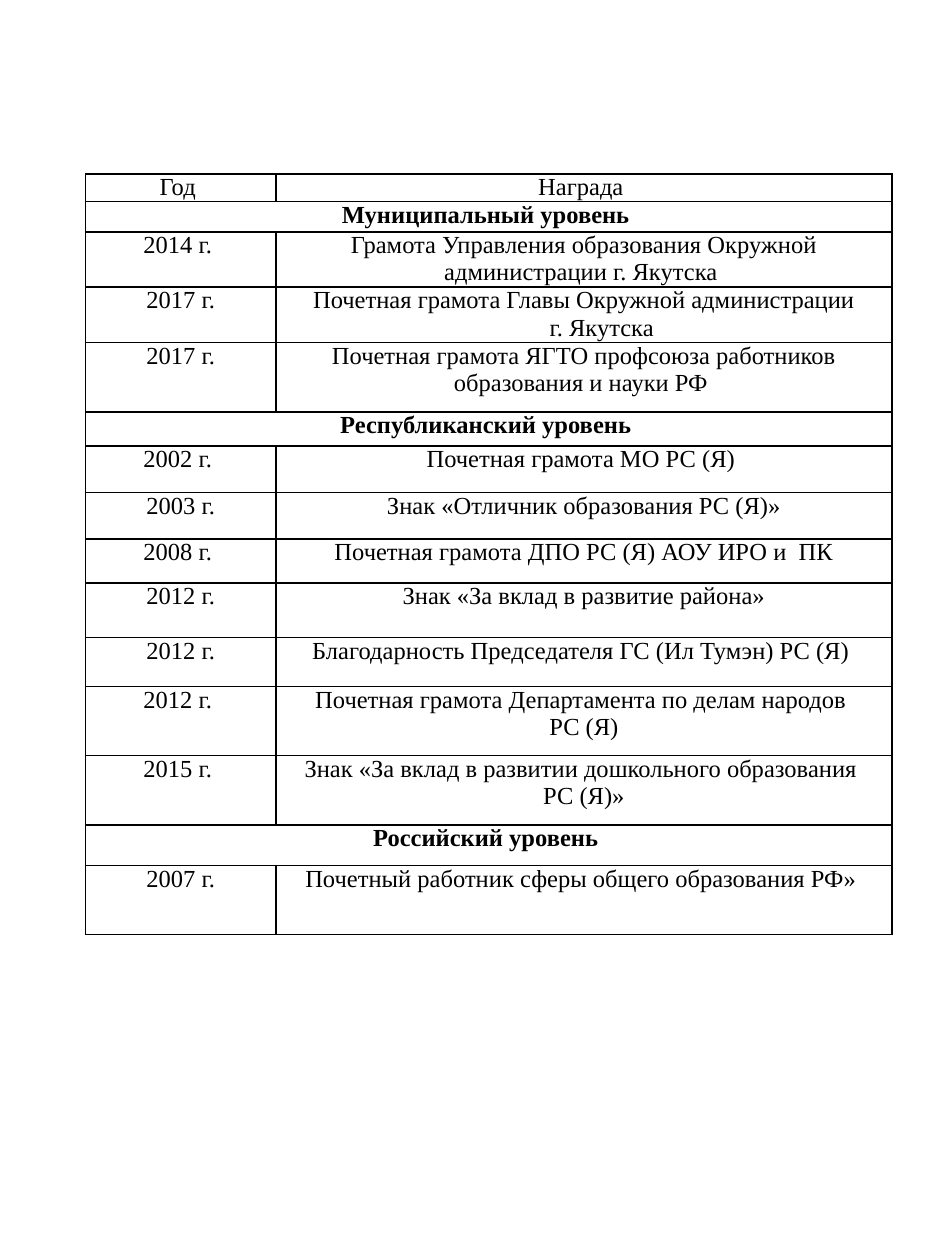
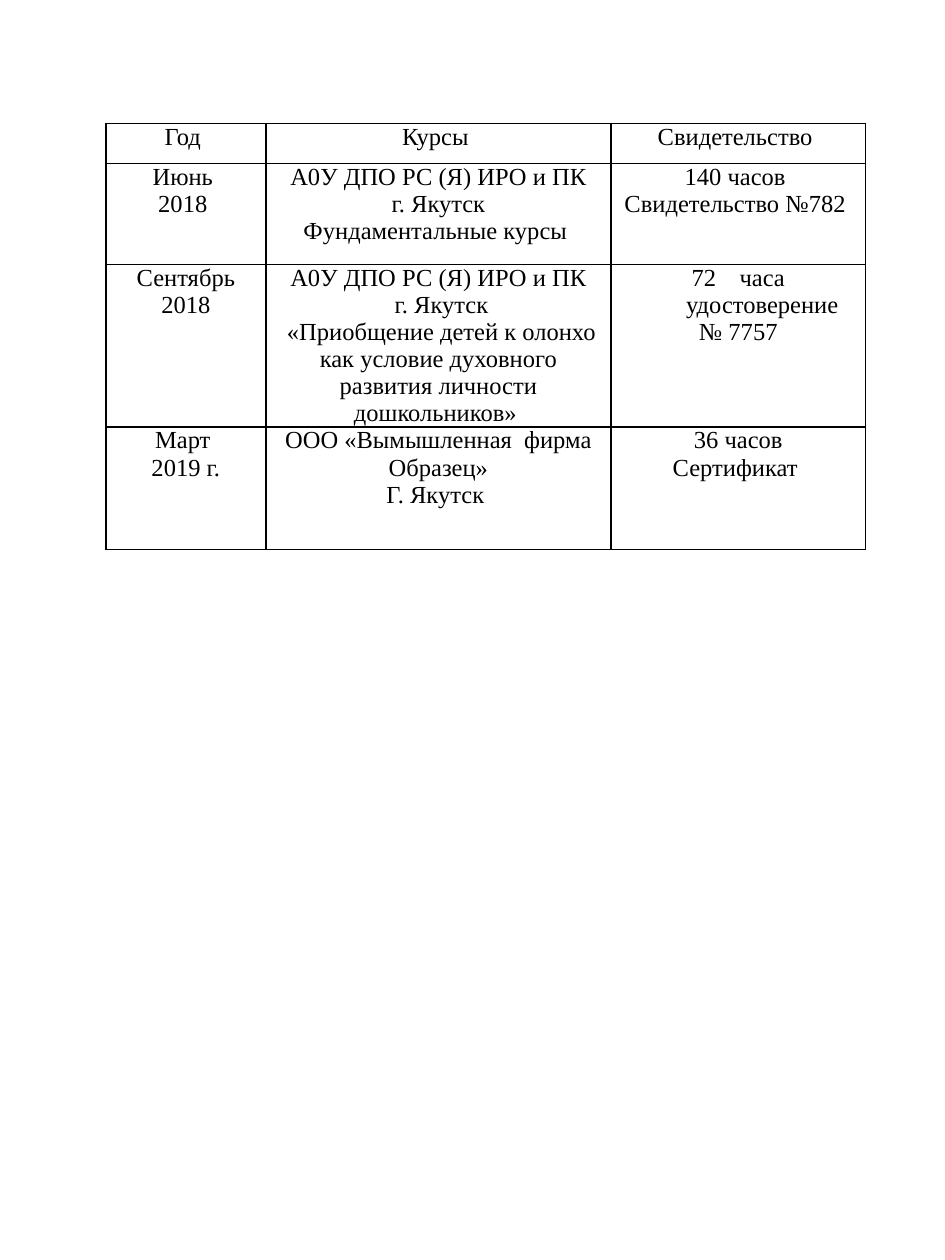
from dataclasses import dataclass

from lxml.etree import SubElement
from pptx import Presentation
from pptx.dml.color import RGBColor
from pptx.enum.text import MSO_ANCHOR as Anchor, PP_ALIGN as Align
from pptx.oxml.ns import qn
from pptx.util import Inches, Pt

COLORS = {"ink": "000000"}
FONT = "Times New Roman"
TEXT_SIZE = Pt(14)
CELL_MARGIN = Inches(0.07)
BORDER_WIDTH = Pt(1)


@dataclass
class Line:
    """One paragraph; start numbers it, hang pulls its first line left."""
    text: str
    margin: float = 0
    hang: float = 0
    start: int | None = None


@dataclass
class Row:
    """One table row; a single cell is a bold heading across all columns."""
    height: float
    cells: list[list[str | Line]]
    space_before: float = 0


@dataclass
class Grid:
    left: float
    top: float
    columns: list[float]
    rows: list[Row]


# Content
AWARDS = Grid(0.68, 1.38, [1.51, 4.89], [
    Row(0.22, [["Год "], ["Награда "]]),
    Row(0.24, [["Муниципальный уровень "]]),
    Row(0.44, [["2014 г. "], ["Грамота Управления образования Окружной администрации г. Якутска "]]),
    Row(0.44, [["2017 г."], [Line("Почетная грамота Главы Окружной администрации\vг. Якутска ",
                                  margin=0.33, hang=0.73)]]),
    Row(0.55, [["2017 г."], ["Почетная грамота ЯГТО профсоюза работников образования и науки РФ "]]),
    Row(0.27, [["Республиканский уровень "]]),
    Row(0.37, [["2002 г. "], ["Почетная грамота МО РС (Я) "]]),
    Row(0.37, [["2003 г."], ["Знак «Отличник образования РС (Я)»"]]),
    Row(0.35, [["2008 г. "], ["Почетная грамота ДПО РС (Я) АОУ ИРО и  ПК"]]),
    Row(0.43, [["2012 г."], ["Знак «За вклад в развитие района»"]]),
    Row(0.39, [["2012 г."], ["Благодарность Председателя ГС (Ил Тумэн) РС (Я) "]]),
    Row(0.55, [["2012 г. "], ["Почетная грамота Департамента по делам народов ", "РС (Я)"]]),
    Row(0.55, [["2015 г. "], ["Знак «За вклад в развитии дошкольного образования ", "РС (Я)»"]]),
    Row(0.32, [["Российский уровень "]]),
    Row(0.55, [["2007 г."], ["Почетный работник сферы общего образования РФ» "]]),
])

INSTITUTE = "А0У ДПО РС (Я) ИРО и ПК"
COURSES = Grid(0.84, 0.98, [1.27, 2.74, 2.02], [
    Row(0.32, [["Год "], ["Курсы "], ["Свидетельство "]], space_before=3.4),
    Row(0.8, [["Июнь ", "2018 "],
              [INSTITUTE, " г. Якутск ", "Фундаментальные курсы "],
              ["140 часов ", "Свидетельство №782 "]]),
    Row(1.29, [["Сентябрь 2018"],
               [INSTITUTE, " г. Якутск",
                " «Приобщение детей к олонхо как условие духовного развития личности дошкольников» "],
               [Line("часа удостоверение", margin=0.38, hang=0.38, start=72), " № 7757 "]]),
    Row(0.97, [["Март ", "2019 г."],
               ["ООО «Вымышленная  фирма Образец»", "Г. Якутск "],
               ["36 часов", "Сертификат "]]),
])


def add_borders(cell) -> None:
    properties = cell._tc.get_or_add_tcPr()
    for position, side in enumerate(("lnL", "lnR", "lnT", "lnB")):
        border = SubElement(properties, qn(f"a:{side}"), w=str(BORDER_WIDTH))
        fill = SubElement(border, qn("a:solidFill"))
        SubElement(fill, qn("a:srgbClr"), val=COLORS["ink"])
        properties.insert(position, border)


def write_line(para, line: Line, bold: bool, space_before: float) -> None:
    para.alignment = Align.CENTER
    para.space_before = Pt(space_before)
    if line.hang:
        properties = para._p.get_or_add_pPr()
        properties.set("marL", str(Inches(line.margin)))
        properties.set("indent", str(-Inches(line.hang)))
        if line.start is not None:
            SubElement(properties, qn("a:buFont"), typeface=FONT)
            SubElement(properties, qn("a:buAutoNum"), type="arabicPlain", startAt=str(line.start))
    for position, text in enumerate(line.text.split("\v")):
        if position:
            para.add_line_break()
        span = para.add_run()
        span.text = text
        span.font.name = FONT
        span.font.size = TEXT_SIZE
        span.font.bold = bold
        span.font.color.rgb = RGBColor.from_string(COLORS["ink"])


def fill_cell(cell, lines: list[str | Line], bold: bool, space_before: float) -> None:
    frame = cell.text_frame
    for position, line in enumerate(lines):
        para = frame.add_paragraph() if position else frame.paragraphs[0]
        write_line(para, line if isinstance(line, Line) else Line(line), bold, space_before)


def add_grid(deck, grid: Grid) -> None:
    page = deck.slides.add_slide(deck.slide_layouts[6])
    frame = page.shapes.add_table(
        len(grid.rows), len(grid.columns), Inches(grid.left), Inches(grid.top),
        Inches(sum(grid.columns)), Inches(sum(row.height for row in grid.rows)))
    table = frame.table
    table.first_row = table.horz_banding = False
    for column, width in zip(table.columns, grid.columns):
        column.width = Inches(width)

    for table_row, row in zip(table.rows, grid.rows):
        table_row.height = Inches(row.height)
        cells = list(table_row.cells)
        for cell in cells:
            cell.margin_left = cell.margin_right = CELL_MARGIN
            cell.margin_top = cell.margin_bottom = 0
            cell.vertical_anchor = Anchor.TOP
            cell.fill.background()
            add_borders(cell)
        heading = len(row.cells) == 1
        if heading:
            cells[0].merge(cells[-1])
        for cell, lines in zip(cells, row.cells):
            fill_cell(cell, lines, heading, row.space_before)


def main() -> None:
    deck = Presentation()
    deck.slide_width, deck.slide_height = Inches(7.5), Inches(10)
    for grid in (AWARDS, COURSES):
        add_grid(deck, grid)
    deck.save("out.pptx")


if __name__ == "__main__":
    main()
